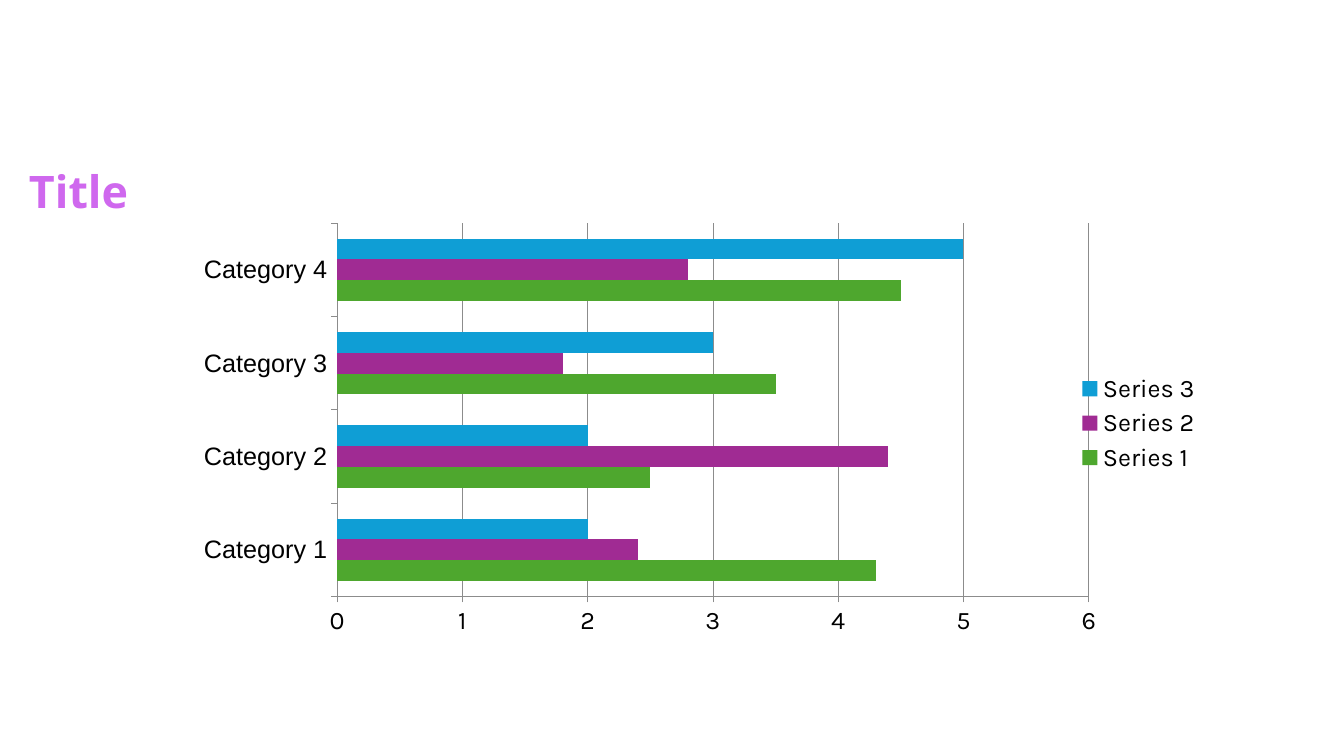
from dataclasses import dataclass

from lxml.etree import SubElement
from pptx import Presentation
from pptx.chart.chart import Chart
from pptx.chart.data import CategoryChartData as Data
from pptx.dml.color import RGBColor
from pptx.enum.chart import XL_CHART_TYPE as Kind
from pptx.enum.chart import XL_LEGEND_POSITION as Side
from pptx.enum.chart import XL_TICK_MARK as Tick
from pptx.enum.text import MSO_AUTO_SIZE as Fit
from pptx.oxml.ns import qn
from pptx.slide import Slide
from pptx.text.text import Font
from pptx.util import Cm, Pt

BLACK = RGBColor(0x00, 0x00, 0x00)
GREY = RGBColor(0x8C, 0x8C, 0x8C)
PINK = RGBColor(0xCF, 0x68, 0xEE)
GREEN = RGBColor(0x4E, 0xA7, 0x2E)
PLUM = RGBColor(0xA0, 0x2B, 0x93)
BLUE = RGBColor(0x0F, 0x9E, 0xD5)


@dataclass
class Bars:
    name: str
    vals: tuple[float, ...]
    color: RGBColor


GROUPS = [f"Category {n}" for n in range(1, 5)]
ROWS = [
    Bars("Series 1", (4.3, 2.5, 3.5, 4.5), GREEN),
    Bars("Series 2", (2.4, 4.4, 1.8, 2.8), PLUM),
    Bars("Series 3", (2, 2, 3, 5), BLUE),
]
PLOT = {"x": 0.166, "y": 0.051, "w": 0.717, "h": 0.838}


def style(font: Font, name: str, size: int, color: RGBColor, bold: bool = False) -> None:
    font.name = name
    font.size = Pt(size)
    font.bold = bold
    font.color.rgb = color


def place_plot(chart: Chart) -> None:
    area = chart._chartSpace.chart.plotArea
    for old in area.findall(qn("c:layout")):
        area.remove(old)
    layout = SubElement(area, qn("c:layout"))
    area.insert(0, layout)
    manual = SubElement(layout, qn("c:manualLayout"))
    parts = {"layoutTarget": "inner", "xMode": "edge", "yMode": "edge", **PLOT}
    for tag, val in parts.items():
        SubElement(manual, qn(f"c:{tag}")).set("val", str(val))


def add_title(slide: Slide) -> None:
    frame = slide.shapes.add_textbox(Cm(0.48), Cm(4.01), Cm(16.84), Cm(1.63)).text_frame
    frame.word_wrap = True
    frame.auto_size = Fit.SHAPE_TO_FIT_TEXT
    frame.text = "Title"
    style(frame.paragraphs[0].runs[0].font, "Open Sans", 32, PINK, True)


def add_bars(slide: Slide) -> None:
    data = Data()
    data.categories = GROUPS
    for row in ROWS:
        data.add_series(row.name, row.vals)
    chart = slide.shapes.add_chart(
        Kind.BAR_CLUSTERED, Cm(4.11), Cm(5.05), Cm(26.42), Cm(11.23), data
    ).chart
    chart.has_title = False
    style(chart.font, "Karla", 18, BLACK)
    chart.has_legend = True
    chart.legend.position = Side.RIGHT
    chart.legend.include_in_layout = False
    style(chart.legend.font, "Karla", 18, BLACK)

    plot = chart.plots[0]
    plot.gap_width = 150
    plot.vary_by_categories = False
    for bars, row in zip(plot.series, ROWS):
        bars.format.fill.solid()
        bars.format.fill.fore_color.rgb = row.color

    scale = chart.value_axis
    scale.minimum_scale, scale.maximum_scale, scale.major_unit = 0, 6, 1
    scale.has_major_gridlines = True
    scale.tick_labels.number_format = "General"
    scale.tick_labels.number_format_is_linked = False
    for axis, name in ((chart.category_axis, "Arial"), (scale, "Karla")):
        axis.major_tick_mark = Tick.OUTSIDE
        axis.minor_tick_mark = Tick.NONE
        style(axis.tick_labels.font, name, 18, BLACK)
    for part in (chart.category_axis, scale, scale.major_gridlines):
        part.format.line.color.rgb = GREY
        part.format.line.width = Pt(0.5)
    place_plot(chart)


def main() -> None:
    deck = Presentation()
    deck.slide_width, deck.slide_height = Cm(33.87), Cm(19.05)
    slide = deck.slides.add_slide(deck.slide_layouts[6])
    add_title(slide)
    add_bars(slide)
    deck.save("out.pptx")


if __name__ == "__main__":
    main()
